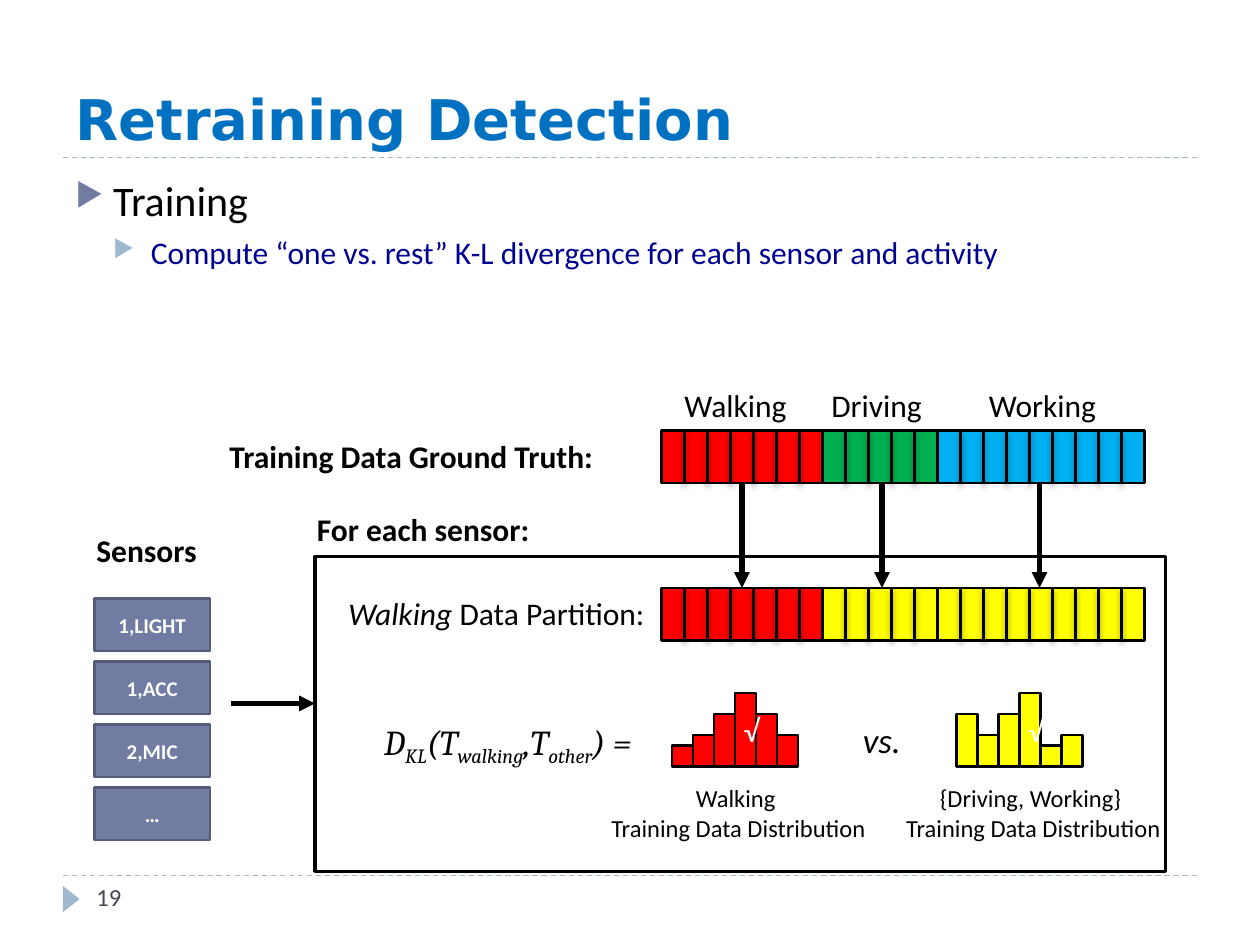
from itertools import accumulate
from lxml import etree
from pptx import Presentation
from pptx.dml.color import RGBColor
from pptx.enum import dml, shapes, text
from pptx.oxml import ns
from pptx.util import Pt

THEME = dict(
    black="000000", white="FFFFFF", title="0070C0", sub="000090", page="464653",
    slate="727CA3", edge="545C79", mist="9FB8CD",
    red="FF0000", green="00B050", blue="00B0F0", yellow="FFFF00",
    sans="Calibri", serif="Cambria", head="DejaVu Sans",
    huge=32, big=24, math=20, mid=18, small=14, tiny=12,
)
T = THEME

TITLE = "Retraining Detection"
PAGE = "19"
BULLETS = [
    ("Training", "big", "black", "slate", 6),
    ("Compute “one vs. rest” K-L divergence for each sensor and activity", "mid", "sub", "mist", 5),
]
SENSORS = ["1,LIGHT", "1,ACC", "2,MIC", "…"]
COUNTS = [7, 5, 9]
STRIPS = [(246, ["red", "green", "blue"]), (336, ["red", "yellow", "yellow"])]
ACTS = [("Walking", 384, 74), ("Driving", 468, 68.5), ("Working", 558, 79)]
HEADS = [
    ("Training Data Ground Truth:", 124, 246, 254),
    ("Sensors", 48, 300, 81),
    ("For each sensor:", 174, 288, 192),
]
FORMULA = [("D", 0), ("KL", 1), ("(T", 0), ("walking", 1), (",T", 0), ("other", 1), (") =", 0)]
DISTS = [
    ("red", 384, [12, 18, 30, 42, 30, 18], 340, ["Walking ", "Training Data Distribution"]),
    ("yellow", 546.5, [30, 18, 30, 42, 12, 18], 508.5, ["{Driving, Working} ", "Training Data Distribution"]),
]
DROPS = [424, 504, 594]

LEFT, SPAN, TALL = 378, 276, 30
CELL = SPAN / sum(COUNTS)
BAR, BASE = 12, 438

deck = Presentation()
deck.slide_width, deck.slide_height = Pt(720), Pt(540)
slide = deck.slides.add_slide(deck.slide_layouts[6])


def hue(name):
    return RGBColor.from_string(T[name])


def node(host, tag, **attrs):
    return etree.SubElement(host, ns.qn(tag), attrs)


def style(para, size, color="black", face="sans", bold=False, slant=False):
    font = para.font
    font.size, font.name = Pt(T[size]), T[face]
    font.color.rgb = hue(color)
    font.bold, font.italic = bold, slant


def label(rows, x, y, w, h, size="mid", mid=False, **look):
    frame = slide.shapes.add_textbox(Pt(x), Pt(y), Pt(w), Pt(h)).text_frame
    frame.word_wrap = True
    for i, row in enumerate(rows):
        para = frame.add_paragraph() if i else frame.paragraphs[0]
        para.text = row
        para.alignment = text.PP_ALIGN.CENTER if mid else text.PP_ALIGN.LEFT
        style(para, size, **look)
    return frame


def box(x, y, w, h, fill=None, edge="black", width=1.5, word="", size="mid", bold=False,
        kind=shapes.MSO_SHAPE.RECTANGLE):
    shape = slide.shapes.add_shape(kind, Pt(x), Pt(y), Pt(w), Pt(h))
    shape.shadow.inherit = False
    if fill:
        shape.fill.solid()
        shape.fill.fore_color.rgb = hue(fill)
    else:
        shape.fill.background()
    if edge:
        shape.line.color.rgb = hue(edge)
        shape.line.width = Pt(width)
    else:
        shape.line.fill.background()
    if word:
        frame = shape.text_frame
        frame.vertical_anchor = text.MSO_ANCHOR.MIDDLE
        para = frame.paragraphs[0]
        para.text = word
        para.alignment = text.PP_ALIGN.CENTER
        style(para, size, "white", bold=bold)
    return shape


def line(x1, y1, x2, y2, color="black", width=1.5, dash=False, arrow=False, shade=False):
    link = slide.shapes.add_connector(shapes.MSO_CONNECTOR.STRAIGHT, Pt(x1), Pt(y1), Pt(x2), Pt(y2))
    link.line.color.rgb = hue(color)
    link.line.width = Pt(width)
    if dash:
        link.line.dash_style = dml.MSO_LINE.DASH
    props = link._element.spPr
    if arrow:
        node(link.line._get_or_add_ln(), "a:tailEnd", type="triangle")
    glow = node(props, "a:effectLst")
    if shade:
        cast = node(glow, "a:outerShdw", blurRad=str(Pt(3)), dist=str(Pt(2)),
                    dir="5400000", rotWithShape="0")
        node(node(cast, "a:srgbClr", val=T["black"]), "a:alpha", val="40000")


def bullet(para, level, color):
    props = para._p.get_or_add_pPr()
    props.set("marL", str(Pt(21.6 * (level + 1))))
    props.set("indent", str(Pt(-21.6)))
    node(node(props, "a:buClr"), "a:srgbClr", val=T[color])
    node(props, "a:buSzPct", val="76000")
    node(props, "a:buChar", char="▶")


def strip(y, fills):
    ends = list(accumulate(COUNTS, initial=0))
    for start, count, fill in zip(ends, COUNTS, fills):
        box(LEFT + start * CELL, y, count * CELL, TALL, fill)
    for i in range(1, ends[-1]):
        if i not in ends:
            x = LEFT + i * CELL
            line(x, y, x, y + TALL, shade=True)


def chart(fill, x, highs, left, rows):
    for i, high in reversed(list(enumerate(highs))):
        box(x + i * BAR, BASE - high, BAR, high, fill, word="√" if high == max(highs) else "")
    label(rows, left, 444, 164, 41, "small", mid=True)


for y in (500.5, 90):
    line(36, y, 684, y, "mist", 0.75, dash=True)
mark = box(33.2, 509, 15, 9.5, "mist", None, kind=shapes.MSO_SHAPE.ISOSCELES_TRIANGLE)
mark.rotation = 90
head = label([TITLE], 36, 12, 648, 78, "huge", color="title", face="head", bold=True)
head.vertical_anchor = text.MSO_ANCHOR.BOTTOM
label([PAGE], 48, 500.5, 156, 29, "small", color="page")

body = label([row[0] for row in BULLETS], 36, 96, 648, 108)
for level, (para, row) in enumerate(zip(body.paragraphs, BULLETS)):
    _, size, color, dot, gap = row
    para.level = level
    para.space_before = Pt(gap)
    style(para, size, color)
    bullet(para, level, dot)

for i, name in enumerate(SENSORS):
    box(54, 342 + 36 * i, 66, 30, "slate", "edge", word=name, size="tiny", bold=True)
for y, fills in STRIPS:
    strip(y, fills)
for name, x, w in ACTS:
    label([name], x, 217, w, 29)
for name, x, y, w in HEADS:
    label([name], x, y, w, 29, bold=True)

math = label([""], 199.5, 408, 181.5, 31.5, "math", mid=True, face="serif", slant=True).paragraphs[0]
for part, low in FORMULA:
    run = math.add_run()
    run.text = part
    if low:
        run.font._element.set("baseline", "-25000")
for dist in DISTS:
    chart(*dist)
for x in DROPS:
    line(x, 276, x, 336, width=3, arrow=True)

part = label([""], 192, 336, 186, 29).paragraphs[0]
for word, slant in (("Walking", True), (" Data Partition:", False)):
    run = part.add_run()
    run.text, run.font.italic = word, slant
label(["vs."], 486, 407, 42, 31.5, "math", slant=True)
box(180, 318, 486, 180, width=1.75)
line(132, 402, 180, 402, width=3, arrow=True)

deck.save("out.pptx")
